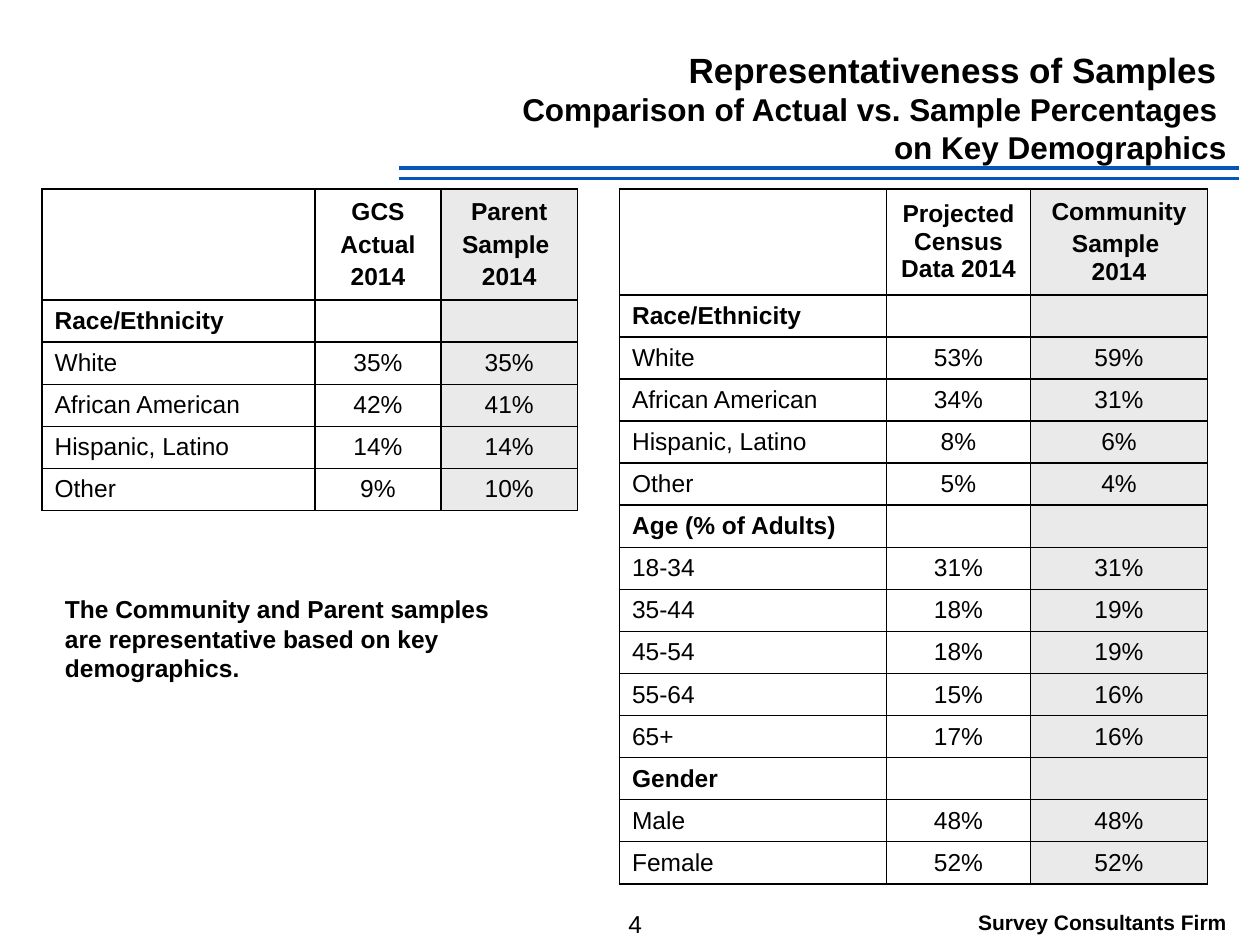
from lxml import etree
from pptx import Presentation, util as u
from pptx.dml import color as dml
from pptx.enum import shapes, text
from pptx.oxml import ns

Pt = u.Pt
COLORS = {"text": "000000", "rule": "0556B7", "sample": "EAEAEA"}
LEFT, CENTER, RIGHT = text.PP_ALIGN.LEFT, text.PP_ALIGN.CENTER, text.PP_ALIGN.RIGHT


def rgb(name):
    return dml.RGBColor.from_string(COLORS[name])


def write(frame, lines, align, bold=True, sizes=(14,), before=0):
    """Write one paragraph per line; the last size serves all later lines."""
    frame.word_wrap = True
    frame.text = "\n".join(lines)
    for i, paragraph in enumerate(frame.paragraphs):
        paragraph.alignment = align
        if i and before:
            paragraph.space_before = Pt(before)
        style = {"name": "Arial", "size": Pt(sizes[min(i, len(sizes) - 1)]), "bold": bold}
        for run in paragraph.runs:
            for key, value in style.items():
                setattr(run.font, key, value)
            run.font.color.rgb = rgb("text")


deck = Presentation()
deck.slide_width, deck.slide_height = Pt(720), Pt(540)
slide = deck.slides.add_slide(deck.slide_layouts[6])

# Double rule under the title
for y in (96, 102):
    rule = slide.shapes.add_connector(
        shapes.MSO_CONNECTOR.STRAIGHT, Pt(228), Pt(y), Pt(708), Pt(y))
    rule.line.color.rgb = rgb("rule")
    rule.line.width = Pt(2.25)
    etree.SubElement(rule._element.spPr, ns.qn("a:effectLst"))

# Title, conclusion and footer
title = ["Representativeness of Samples ",
         "Comparison of Actual vs. Sample Percentages ",
         "on Key Demographics"]
conclusion = ["The Community and Parent samples are representative "
              "based on key demographics."]
text_blocks = [
    ((138, 24, 570, 75), title, {"align": RIGHT, "sizes": (20, 18)}),
    ((30, 336, 270, 58), conclusion, {"align": LEFT}),
    ((342, 516, 42, 24), ["4"], {"align": CENTER, "bold": False}),
    ((546, 516, 168, 22), ["Survey Consultants Firm"], {"align": CENTER, "sizes": (12,)}),
]
for place, lines, style in text_blocks:
    write(slide.shapes.add_textbox(*map(Pt, place)).text_frame, lines, **style)

# Demographic tables: a row with a label alone opens a section
parent_rows = [
    ("", "GCS\nActual\n2014", "Parent\nSample \n2014"),
    ("Race/Ethnicity", "", ""),
    ("White", "35%", "35%"),
    ("African American", "42%", "41%"),
    ("Hispanic, Latino", "14%", "14%"),
    ("Other", "9%", "10%"),
]
community_rows = [
    ("", "Projected Census Data 2014", "Community\nSample \v2014"),
    ("Race/Ethnicity", "", ""),
    ("White", "53%", "59%"),
    ("African American", "34%", "31%"),
    ("Hispanic, Latino", "8%", "6%"),
    ("Other", "5%", "4%"),
    ("Age (% of Adults)", "", ""),
    ("18-34", "31%", "31%"),
    ("35-44", "18%", "19%"),
    ("45-54", "18%", "19%"),
    ("55-64", "15%", "16%"),
    ("65+", "17%", "16%"),
    ("Gender", "", ""),
    ("Male", "48%", "48%"),
    ("Female", "52%", "52%"),
]
ROW_HEIGHT = 24
demographics = [
    (24, 63.5, (156, 72, 78), parent_rows),
    (354, 60.5, (152.5, 82.5, 101), community_rows),
]
for left, header_height, widths, rows in demographics:
    heights = [header_height] + [ROW_HEIGHT] * (len(rows) - 1)
    table = slide.shapes.add_table(
        len(rows), len(widths), Pt(left), Pt(108), Pt(sum(widths)), Pt(sum(heights))).table
    table.first_row = table.horz_banding = False
    for column, width in zip(table.columns, widths):
        column.width = Pt(width)
    for r, (values, height) in enumerate(zip(rows, heights)):
        table.rows[r].height = Pt(height)
        for c, value in enumerate(values):
            cell = table.cell(r, c)
            cell.vertical_anchor = text.MSO_ANCHOR.MIDDLE
            if value:
                write(cell.text_frame, value.split("\n"), CENTER if c else LEFT,
                      bold=r == 0 or not values[1], before=2.8)
            else:  # keeps an empty cell from stretching its row
                cell.margin_top = cell.margin_bottom = 0
            # Borders precede the fill in the cell properties
            properties = cell._tc.get_or_add_tcPr()
            for side in ("lnL", "lnR", "lnT", "lnB"):
                border = etree.SubElement(properties, ns.qn(f"a:{side}"), w=str(Pt(1)))
                solid = etree.SubElement(border, ns.qn("a:solidFill"))
                etree.SubElement(solid, ns.qn("a:srgbClr"), val=COLORS["text"])
            if c == 2:
                cell.fill.solid()
                cell.fill.fore_color.rgb = rgb("sample")
            else:
                cell.fill.background()

deck.save("out.pptx")
